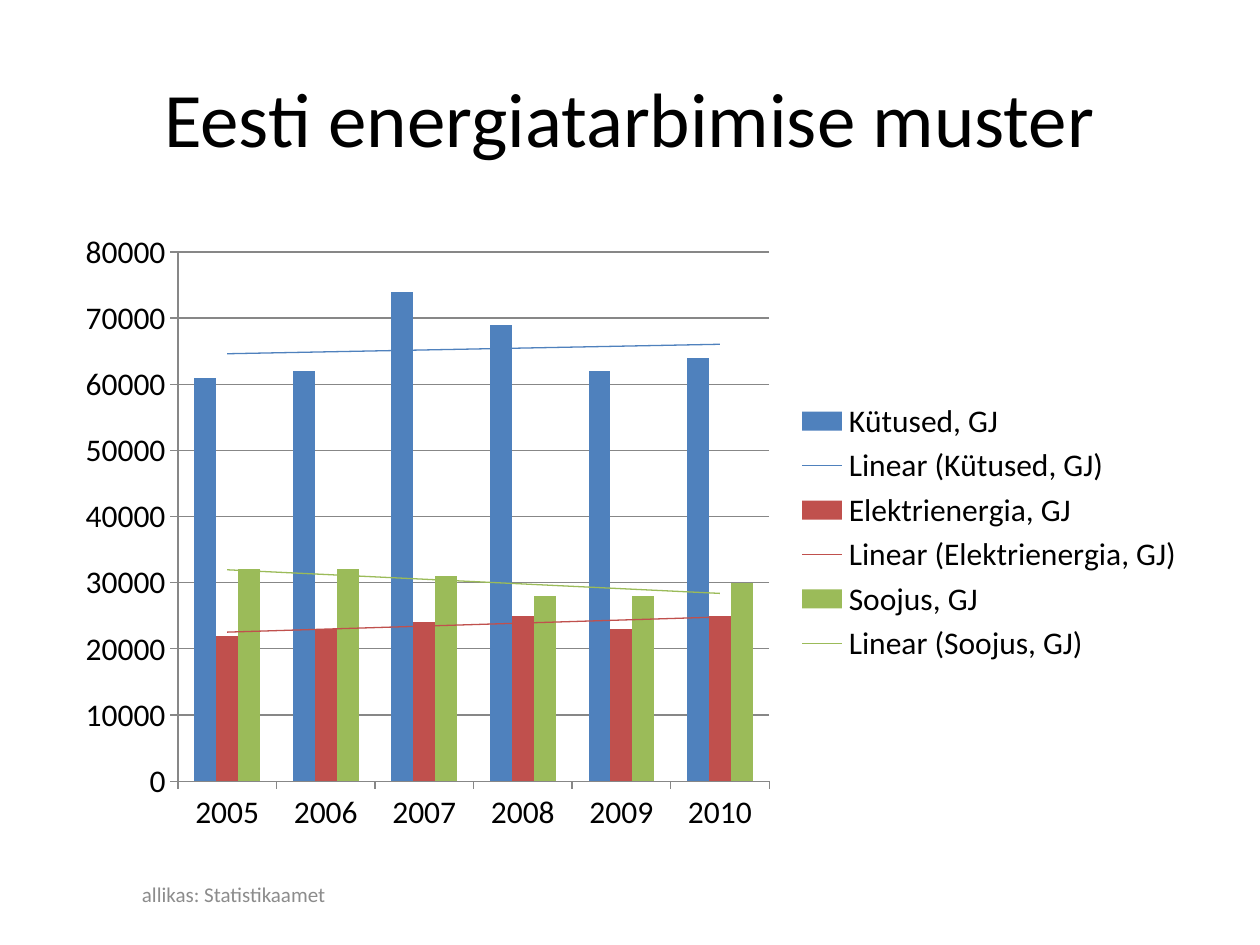
from dataclasses import dataclass

from lxml import etree
from pptx import Presentation
from pptx.chart.data import CategoryChartData
from pptx.dml.color import RGBColor
from pptx.enum.chart import XL_CHART_TYPE, XL_LEGEND_POSITION, XL_TICK_MARK
from pptx.enum.text import MSO_ANCHOR, PP_ALIGN
from pptx.oxml import parse_xml
from pptx.oxml.ns import nsdecls, qn
from pptx.util import Pt

COLUMN = XL_CHART_TYPE.COLUMN_CLUSTERED
RIGHT = XL_LEGEND_POSITION.RIGHT
OUT = XL_TICK_MARK.OUTSIDE
MIDDLE = MSO_ANCHOR.MIDDLE
CENTER = PP_ALIGN.CENTER

FONT = "Calibri"
COLORS = {
    "black": "000000",
    "note": "8C8C8C",
    "axis": "878787",
    "blue": "4F81BD",
    "red": "C0504D",
    "green": "9BBB59",
}
YEARS = [str(year) for year in range(2005, 2011)]


@dataclass
class Label:
    text: str
    box: tuple
    size: float
    color: str


@dataclass
class Series:
    name: str
    color: str
    values: tuple


LABELS = [
    Label("Eesti energiatarbimise muster", (36, 21.6, 648, 90), 44, "black"),
    Label("allikas: Statistikaamet", (19.44, 496.8, 228.24, 28.8), 12, "note"),
]
SERIES = [
    Series("Kütused, GJ", "blue", (61000, 62000, 74000, 69000, 62000, 64000)),
    Series("Elektrienergia, GJ", "red", (22000, 23000, 24000, 25000, 23000, 25000)),
    Series("Soojus, GJ", "green", (32000, 32000, 31000, 28000, 28000, 30000)),
]


def paint(name: str) -> RGBColor:
    return RGBColor.from_string(COLORS[name])


def style(font, size: float, color: str) -> None:
    font.name = FONT
    font.size = Pt(size)
    font.color.rgb = paint(color)


def add_label(slide, label: Label) -> None:
    frame = slide.shapes.add_textbox(*map(Pt, label.box)).text_frame
    frame.word_wrap = True
    frame.vertical_anchor = MIDDLE
    line = frame.paragraphs[0]
    line.text = label.text
    line.alignment = CENTER
    style(line.font, label.size, label.color)


def add_trend(plot_row, color: str) -> None:
    trend = parse_xml(
        f'<c:trendline {nsdecls("c", "a")}><c:spPr><a:ln w="{Pt(0.75)}">'
        f'<a:solidFill><a:srgbClr val="{COLORS[color]}"/></a:solidFill></a:ln></c:spPr>'
        '<c:trendlineType val="linear"/><c:dispRSqr val="0"/><c:dispEq val="0"/>'
        "</c:trendline>"
    )
    plot_row._element.find(qn("c:cat")).addprevious(trend)


def hide_trends(legend, count: int) -> None:
    mark = legend._element.find(qn("c:legendPos"))
    for index in reversed(range(count, 2 * count)):
        entry = etree.Element(qn("c:legendEntry"))
        etree.SubElement(entry, qn("c:idx")).set("val", str(index))
        etree.SubElement(entry, qn("c:delete")).set("val", "1")
        mark.addnext(entry)


def style_line(line) -> None:
    line.color.rgb = paint("axis")
    line.width = Pt(0.75)


def add_graph(slide, rows: list[Series]) -> None:
    data = CategoryChartData(number_format="General")
    data.categories = YEARS
    for row in rows:
        data.add_series(row.name, row.values)
    box = map(Pt, (36, 126, 648, 356.4))
    chart = slide.shapes.add_chart(COLUMN, *box, data).chart
    chart.has_title = False
    style(chart.font, 18, "black")

    plot = chart.plots[0]
    plot.gap_width = 150
    plot.overlap = 0
    plot.vary_by_categories = False
    for item, row in zip(plot.series, rows):
        item.invert_if_negative = False
        item.format.fill.solid()
        item.format.fill.fore_color.rgb = paint(row.color)
        add_trend(item, row.color)

    for axis in (chart.category_axis, chart.value_axis):
        axis.major_tick_mark = OUT
        style_line(axis.format.line)
    scale = chart.value_axis
    scale.minimum_scale, scale.maximum_scale, scale.major_unit = 0, 80000, 10000
    scale.has_major_gridlines = True
    style_line(scale.major_gridlines.format.line)

    chart.has_legend = True
    chart.legend.position = RIGHT
    chart.legend.include_in_layout = False
    hide_trends(chart.legend, len(rows))


def main() -> None:
    deck = Presentation()
    deck.slide_width, deck.slide_height = Pt(720), Pt(540)
    slide = deck.slides.add_slide(deck.slide_layouts[6])
    add_graph(slide, SERIES)
    for label in LABELS:
        add_label(slide, label)
    deck.save("out.pptx")


if __name__ == "__main__":
    main()
